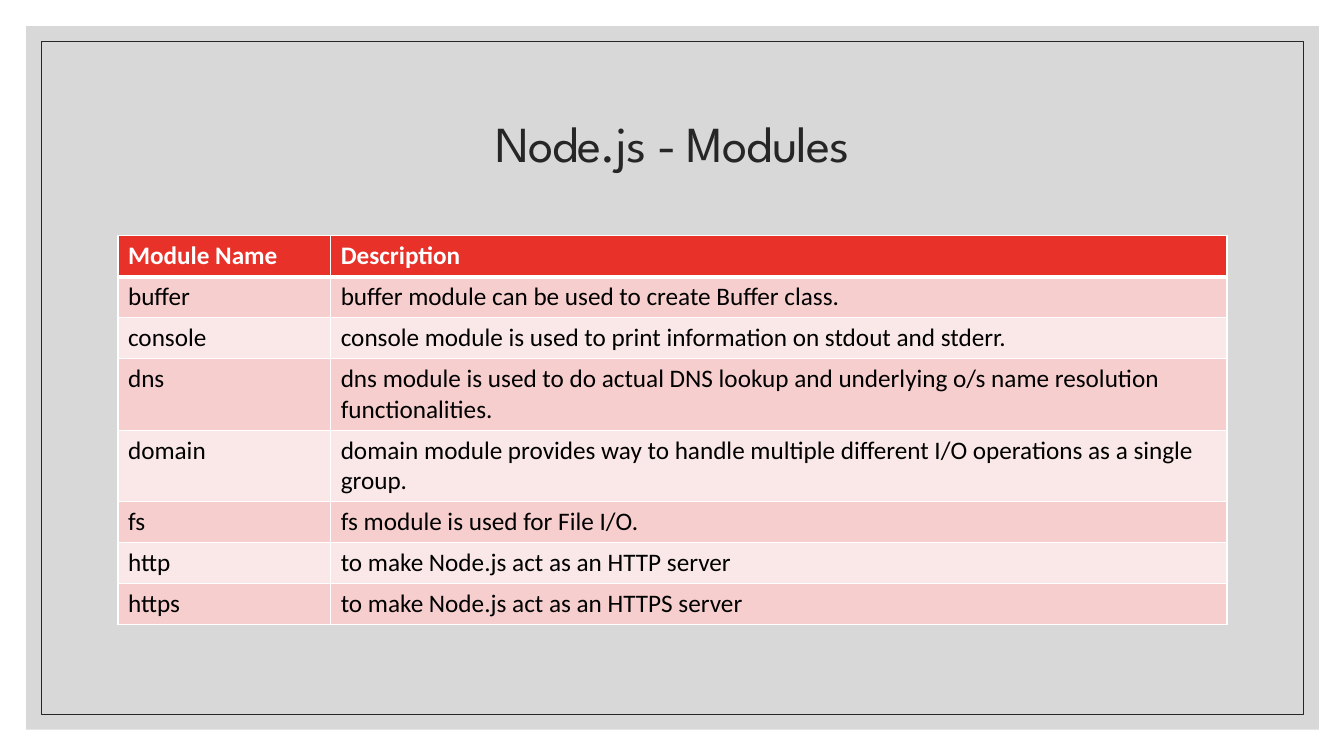
from dataclasses import dataclass

from lxml import etree
from pptx import Presentation
from pptx.dml.color import RGBColor
from pptx.enum.shapes import MSO_SHAPE
from pptx.enum.text import MSO_ANCHOR, MSO_AUTO_SIZE, PP_ALIGN
from pptx.oxml.ns import qn
from pptx.util import Inches, Pt

RECTANGLE = MSO_SHAPE.RECTANGLE
MIDDLE = MSO_ANCHOR.MIDDLE
NO_FIT = MSO_AUTO_SIZE.NONE
CENTER = PP_ALIGN.CENTER
TITLE_ONLY = 5


@dataclass(frozen=True)
class Theme:
    """Colours, fonts and type sizes of the deck."""
    panel: str = "BFBFBF"
    ink: str = "262626"
    header: str = "E73129"
    bands: tuple = ("F6CECD", "FAE8E8")
    white: str = "FFFFFF"
    black: str = "000000"
    title_font: str = "League Spartan"
    body_font: str = "Calibri"
    title_size: int = 36
    body_size: int = 18


THEME = Theme()
MODULES = [
    ("Module Name", "Description"),
    ("buffer", "buffer module can be used to create Buffer class."),
    ("console", "console module is used to print information on stdout and stderr."),
    ("dns", "dns module is used to do actual DNS lookup and underlying o/s name "
            "resolution functionalities."),
    ("domain", "domain module provides way to handle multiple different I/O "
               "operations as a single group."),
    ("fs", "fs module is used for File I/O."),
    ("http", "to make Node.js act as an HTTP server"),
    ("https", "to make Node.js act as an HTTPS server"),
]


def apply_format(target, values):
    """Set every attribute named in values on target."""
    for name, value in values.items():
        setattr(target, name, value)


def write_span(para, text, color, **font):
    """Add one formatted run to a paragraph."""
    span = para.add_run()
    span.text = text
    apply_format(span.font, font)
    span.font.color.rgb = RGBColor.from_string(color)
    return span


def add_panel(page, left, top, width, height):
    """Place a plain rectangle."""
    panel = page.shapes.add_shape(
        RECTANGLE, *map(Inches, (left, top, width, height)))
    panel.shadow.inherit = False
    return panel


def draw_frame(page, left, top, width, height, inset=0.15):
    """Draw the translucent panel and the thin outline inside it."""
    panel = add_panel(page, left, top, width, height)
    panel.fill.solid()
    panel.fill.fore_color.rgb = RGBColor.from_string(THEME.panel)
    color = panel._element.spPr.find(qn("a:solidFill"))[0]
    etree.SubElement(color, qn("a:alpha"), val="60000")
    panel.line.fill.background()

    outline = add_panel(page, left + inset, top + inset,
                        width - 2 * inset, height - 2 * inset)
    outline.fill.background()
    outline.line.color.rgb = RGBColor.from_string(THEME.ink)
    outline.line.width = Pt(0.5)


def place_title(page, text, left, top, width, height):
    """Move the title placeholder in front of the frame and fill it."""
    title = page.shapes.title
    page.shapes._spTree.append(title._element)
    apply_format(title, {"left": Inches(left), "top": Inches(top),
                         "width": Inches(width), "height": Inches(height)})
    apply_format(title.text_frame, {"word_wrap": True, "auto_size": NO_FIT,
                                    "vertical_anchor": MIDDLE})
    para = title.text_frame.paragraphs[0]
    apply_format(para, {"alignment": CENTER, "line_spacing": 0.9})
    span = write_span(para, text, THEME.ink, name=THEME.title_font,
                      size=Pt(THEME.title_size))
    span.font._element.set("spc", "-70")


def set_borders(cell, **widths):
    """Give the cell white borders with a width in points for each side."""
    properties = cell._tc.get_or_add_tcPr()
    for side, width in widths.items():
        line = etree.SubElement(properties, qn(f"a:ln{side}"), w=str(Pt(width)))
        fill = etree.SubElement(line, qn("a:solidFill"))
        etree.SubElement(fill, qn("a:srgbClr"), val=THEME.white)


def draw_module_table(page, rows, left, top, width, name_width, row_height):
    """Draw the banded table of modules under a bold header row."""
    frame = page.shapes.add_table(
        len(rows), len(rows[0]), Inches(left), Inches(top), Inches(width),
        Inches(row_height * len(rows)))
    table = frame.table
    for column, size in zip(table.columns, (name_width, width - name_width)):
        column.width = Inches(size)
    for row_index, texts in enumerate(rows):
        table.rows[row_index].height = Inches(row_height)
        is_header = row_index == 0
        fill = THEME.header if is_header else THEME.bands[(row_index - 1) % 2]
        for column_index, text in enumerate(texts):
            cell = table.cell(row_index, column_index)
            set_borders(cell, L=1, R=1, T=3 if row_index == 1 else 1,
                        B=3 if is_header else 1)
            cell.fill.solid()
            cell.fill.fore_color.rgb = RGBColor.from_string(fill)
            write_span(cell.text_frame.paragraphs[0], text,
                       THEME.white if is_header else THEME.black,
                       name=THEME.body_font, size=Pt(THEME.body_size),
                       bold=is_header)


def main():
    """Build the deck and save it."""
    deck = Presentation()
    apply_format(deck, {"slide_width": Inches(13.33), "slide_height": Inches(7.5)})
    page = deck.slides.add_slide(deck.slide_layouts[TITLE_ONLY])
    draw_frame(page, 0.26, 0.26, 12.82, 6.98)
    place_title(page, "Node.js - Modules", 1.17, 0.7, 11, 1.5)
    draw_module_table(page, MODULES, 1.17, 2.34, 11, name_width=2.11, row_height=0.4)
    deck.save("out.pptx")


if __name__ == "__main__":
    main()
